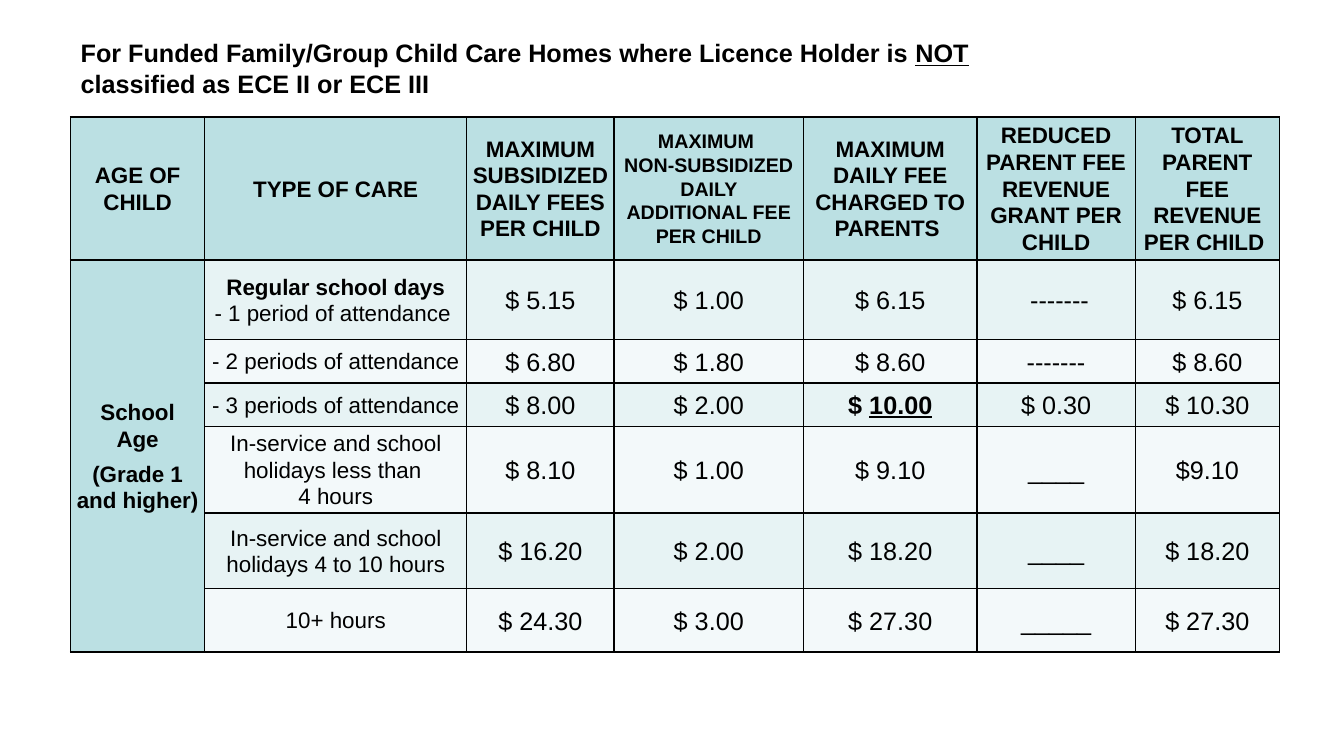
from lxml import etree
from pptx import Presentation
from pptx.dml.color import RGBColor
from pptx.enum.text import MSO_ANCHOR, MSO_AUTO_SIZE, PP_ALIGN
from pptx.oxml.ns import qn
from pptx.util import Inches, Pt

MIDDLE = MSO_ANCHOR.MIDDLE
NO_AUTOFIT = MSO_AUTO_SIZE.NONE
CENTER, LEFT = PP_ALIGN.CENTER, PP_ALIGN.LEFT

COLORS = {
    "text": "000000",
    "border": "000000",
    "heading": "BBE0E3",
    "band_dark": "E7F3F4",
    "band_light": "F3F9FA",
}
TITLE = [
    ("For Funded Family/Group Child Care Homes where Licence Holder is ", True, False),
    ("NOT", True, True),
    (" classified as ECE II or ECE III", True, False),
]
COLUMN_WIDTHS = [1.33, 2.6, 1.46, 1.88, 1.72, 1.57, 1.43]
ROW_HEIGHTS = [1.42, 0.79, 0.43, 0.43, 0.86, 0.75, 0.63]
HEADINGS = [
    "AGE OF CHILD",
    "TYPE OF CARE",
    "MAXIMUM SUBSIDIZED DAILY FEES PER CHILD",
    "MAXIMUM \nNON-SUBSIDIZED DAILY ADDITIONAL FEE PER CHILD",
    "MAXIMUM DAILY FEE CHARGED TO PARENTS ",
    "REDUCED PARENT FEE REVENUE GRANT PER CHILD",
    "TOTAL PARENT FEE REVENUE PER CHILD ",
]
AGE_GROUP = [("School", 0), ("Age", 6), ("(Grade 1 and higher)", 6)]
REGULAR_DAYS = [("Regular school days\n", True, False), ("- 1 period of attendance ", False, False)]
HIGHEST_FEE = [("$ ", True, False), ("10.00", True, True)]
FEES = [
    [REGULAR_DAYS, "$ 5.15", "$ 1.00", "$ 6.15", " -------", "$ 6.15"],
    ["- 2 periods of attendance ", "$ 6.80", "$ 1.80", "$ 8.60", "-------", "$ 8.60"],
    ["- 3 periods of attendance", "$ 8.00", "$ 2.00", HIGHEST_FEE, "$ 0.30", "$ 10.30"],
    ["In-service and school holidays less than \n4 hours",
     "$ 8.10", "$ 1.00", "$ 9.10", "____", "$9.10"],
    ["In-service and school holidays 4 to 10 hours",
     "$ 16.20", "$ 2.00", "$ 18.20", "____", "$ 18.20"],
    ["10+ hours", "$ 24.30", "$ 3.00", "$ 27.30", "_____", "$ 27.30"],
]


class FeeSlide:
    """Hold the style and the current slide, and add its elements."""

    def __init__(self, presentation):
        self.font = "Arial"
        self.slide = presentation.slides.add_slide(presentation.slide_layouts[5])

    def set_text(self, paragraph, content, size, bold=False, align=CENTER):
        runs = [(content, bold, False)] if isinstance(content, str) else content
        for text, run_bold, underline in runs:
            for index, line in enumerate(text.split("\n")):
                if index:
                    paragraph.add_line_break()
                if line:
                    run = paragraph.add_run()
                    run.text = line
                    if len(runs) > 1:
                        run.font.bold = run_bold
                        run.font.underline = underline
        paragraph.alignment = align
        paragraph.font.name = self.font
        paragraph.font.size = Pt(size)
        paragraph.font.bold = bold
        paragraph.font.color.rgb = RGBColor.from_string(COLORS["text"])

    def add_title(self, left, top, width, height, content):
        title = self.slide.shapes.title
        title.left, title.top = Inches(left), Inches(top)
        title.width, title.height = Inches(width), Inches(height)
        frame = title.text_frame
        frame.word_wrap = True
        frame.auto_size = NO_AUTOFIT
        frame.vertical_anchor = MIDDLE
        self.set_text(frame.paragraphs[0], content, 18, True, LEFT)

    def add_table(self, left, top, widths, heights):
        table = self.slide.shapes.add_table(
            len(heights), len(widths), Inches(left), Inches(top),
            Inches(sum(widths)), Inches(sum(heights))).table
        table.first_row = table.horz_banding = False
        for column, width in zip(table.columns, widths):
            column.width = Inches(width)
        for row, height in zip(table.rows, heights):
            row.height = Inches(height)
        return table

    def format_cell(self, cell, color):
        cell.vertical_anchor = MIDDLE
        cell.margin_left = cell.margin_right = Inches(0.05)
        cell.margin_top = cell.margin_bottom = 0
        cell.fill.solid()
        cell.fill.fore_color.rgb = RGBColor.from_string(COLORS[color])
        properties = cell._tc.get_or_add_tcPr()
        for index, side in enumerate(("a:lnL", "a:lnR", "a:lnT", "a:lnB")):
            line = etree.Element(qn(side), w=str(Pt(1)))
            fill = etree.SubElement(line, qn("a:solidFill"))
            etree.SubElement(fill, qn("a:srgbClr"), val=COLORS["border"])
            properties.insert(index, line)

    def fill_cell(self, cell, content, size, bold=False):
        paragraph = cell.text_frame.paragraphs[0]
        paragraph.line_spacing = 1.07
        paragraph.space_after = Pt(6)
        self.set_text(paragraph, content, size, bold)

    def add_fee_table(self):
        table = self.add_table(0.7, 1.16, COLUMN_WIDTHS, ROW_HEIGHTS)
        for column, heading in enumerate(HEADINGS):
            cell = table.cell(0, column)
            self.format_cell(cell, "heading")
            self.fill_cell(cell, heading, 14 if column == 3 else 16, True)
        for row, fees in enumerate(FEES, 1):
            self.format_cell(table.cell(row, 0), "heading")
            for column, content in enumerate(fees, 1):
                cell = table.cell(row, column)
                self.format_cell(cell, "band_dark" if row % 2 else "band_light")
                self.fill_cell(cell, content, 16 if column == 1 else 18)
        age_cell = table.cell(1, 0)
        age_cell.merge(table.cell(len(FEES), 0))
        frame = age_cell.text_frame
        for index, (text, space_after) in enumerate(AGE_GROUP):
            paragraph = frame.add_paragraph() if index else frame.paragraphs[0]
            paragraph.line_spacing = 1.07
            paragraph.space_after = Pt(space_after)
            self.set_text(paragraph, text, 16, True)


def main():
    presentation = Presentation()
    presentation.slide_width = Inches(13.33)
    presentation.slide_height = Inches(7.5)
    fee_slide = FeeSlide(presentation)
    fee_slide.add_title(0.7, 0.32, 9.34, 0.71, TITLE)
    fee_slide.add_fee_table()
    presentation.save("out.pptx")


if __name__ == "__main__":
    main()
